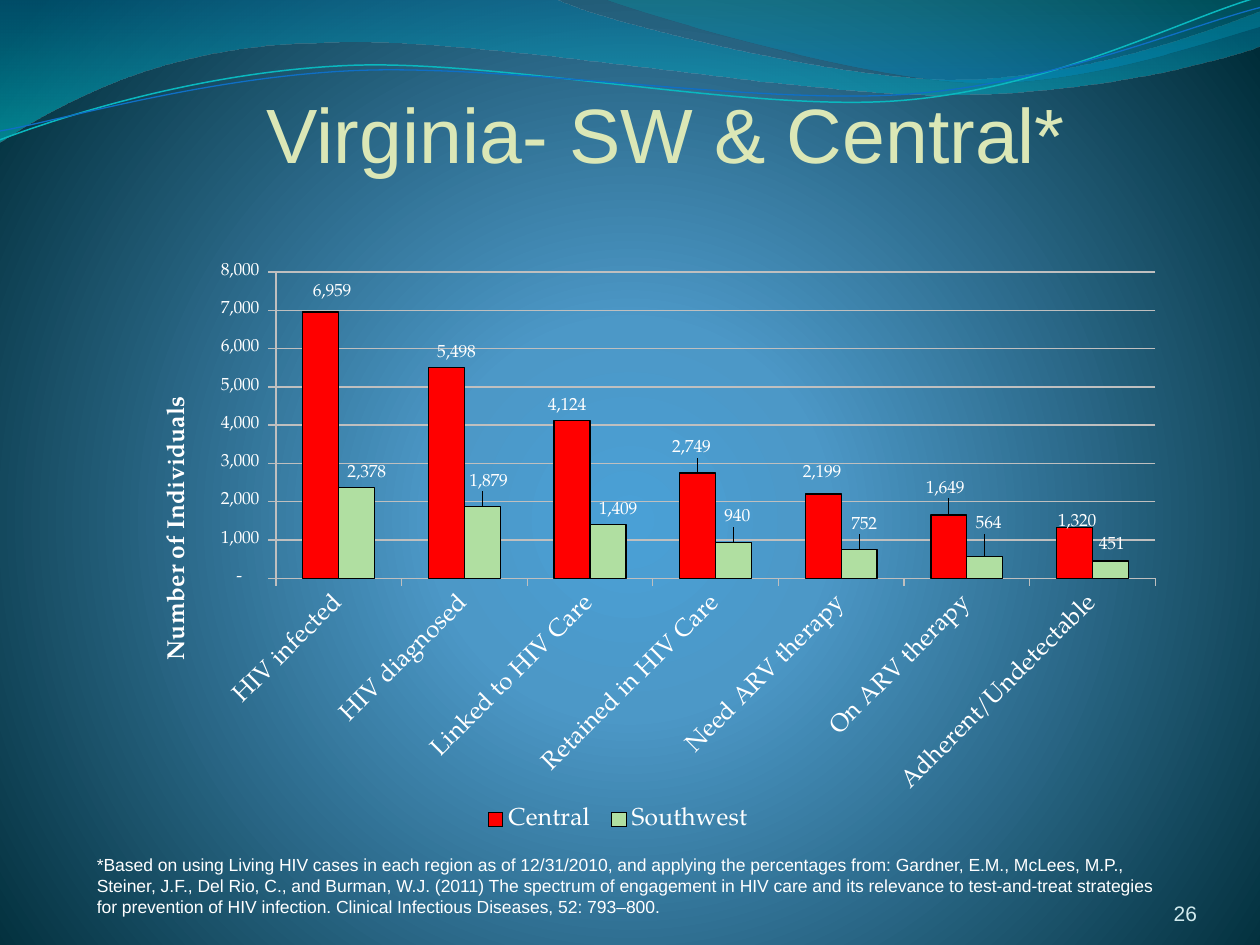
import pptx
import pptx.chart.data
import pptx.dml.color
import pptx.enum.chart
import pptx.enum.text
import pptx.oxml
import pptx.oxml.ns
import pptx.util
from pptx.util import Inches

NS = pptx.oxml.ns.nsdecls("a", "c")
NUM = '_(* #,##0_);_(* \\(#,##0\\);_(* "-"??_);_('
AL = pptx.enum.text.PP_ALIGN
ANC = pptx.enum.text.MSO_ANCHOR
XL = pptx.enum.chart
NO_LEADERS = (
    f'<c:extLst {NS}><c:ext uri="{{CE6537A1-D6FC-4f65-9D91-7224C49458BB}}" '
    'xmlns:c15="http://schemas.microsoft.com/office/drawing/2012/chart">'
    '<c15:showLeaderLines val="0"/></c:ext></c:extLst>')


def qn(tag):
    return pptx.oxml.ns.qn(tag)


def rgb(h):
    return pptx.dml.color.RGBColor.from_string(h)


def set_gradient(fill, props, stops, direction):
    """Fill with (position %, colour, opacity %) stops."""
    fill.gradient()
    gs = "".join(
        f'<a:gs pos="{p * 1000}"><a:srgbClr val="{c}"><a:alpha val="{o * 1000}"/>'
        f"</a:srgbClr></a:gs>" for p, c, o in stops)
    new = pptx.oxml.parse_xml(
        f'<a:gradFill {NS} rotWithShape="1"><a:gsLst>{gs}</a:gsLst>{direction}</a:gradFill>')
    props.replace(props.find(qn("a:gradFill")), new)


def place(el, size, values, after=None, target=None, edge=True):
    """Give a chart part a manual layout, in inches on a chart of that size."""
    parts = f'<c:layoutTarget val="{target}"/>' if target else ""
    if edge:
        parts += '<c:xMode val="edge"/><c:yMode val="edge"/>'
    for tag, v, whole in zip("xywh", values, size * 2):
        parts += f'<c:{tag} val="{v / whole:.5f}"/>'
    new = pptx.oxml.parse_xml(
        f"<c:layout {NS}><c:manualLayout>{parts}</c:manualLayout></c:layout>")
    for old in el.findall(qn("c:layout")):
        el.remove(old)
    if after:
        el.find(qn(after)).addnext(new)
    else:
        el.insert(0, new)
    return new


class Deck:
    font = "Arial"
    chart_font = "TeX Gyre Pagella"
    white = "FFFFFF"
    grid = "BFBFBF"

    def __init__(self):
        self.prs = pptx.Presentation()
        self.prs.slide_width, self.prs.slide_height = Inches(10), Inches(7.5)
        self.s = self.prs.slides.add_slide(self.prs.slide_layouts[6])

    def background(self, stops):
        fill = self.s.background.fill
        fill.gradient()
        set_gradient(fill, self.s.background._cSld.bg.bgPr, stops,
                     '<a:path path="circle"><a:fillToRect l="10000" t="110000" '
                     'r="10000" b="100000"/></a:path>')

    def wave(self, start, segments, stops=None, line=None):
        """Segments are straight (x, y) or cubic (x1, y1, x2, y2, x, y)."""
        fb = self.s.shapes.build_freeform(*map(Inches, start))
        for seg in segments:
            pts = [tuple(map(Inches, pt)) for pt in zip(seg[::2], seg[1::2])]
            fb.add_line_segments(pts, close=False)
        if stops:
            fb.add_line_segments([], close=True)
        sp = fb.convert_to_shape()
        # Join the three points of each cubic segment into one curve
        steps = iter(list(sp._element.iter(qn("a:lnTo"))))
        for seg in segments:
            group = [next(steps) for _ in range(len(seg) // 2)]
            if len(group) == 3:
                curve = pptx.oxml.parse_xml(f"<a:cubicBezTo {NS}/>")
                group[0].addprevious(curve)
                for step in group:
                    curve.append(step[0])
                    step.getparent().remove(step)
        sp.shadow.inherit = False
        if stops:
            set_gradient(sp.fill, sp._element.spPr, stops, '<a:lin ang="5400000" scaled="1"/>')
            sp.line.fill.background()
        else:
            sp.fill.background()
            sp.line.color.rgb = rgb(line[0])
            sp.line.width = pptx.util.Pt(line[1])

    def text(self, box, text, size, color, align=AL.LEFT, anchor=ANC.TOP, inset=(0, 0)):
        sp = self.s.shapes.add_textbox(*map(Inches, box))
        tf = sp.text_frame
        tf.word_wrap = True
        tf.vertical_anchor = anchor
        tf.margin_left = tf.margin_right = Inches(inset[0])
        tf.margin_top = tf.margin_bottom = Inches(inset[1])
        p = tf.paragraphs[0]
        p.alignment = align
        r = p.add_run()
        r.text = text
        self.style(r.font, size, color, self.font)

    def style(self, font, size, color=white, name=chart_font, bold=False):
        font.size, font.name, font.bold = pptx.util.Pt(size), name, bold
        font.color.rgb = rgb(color)

    def axis(self, axis, size):
        axis.major_tick_mark = XL.XL_TICK_MARK.OUTSIDE
        axis.format.line.color.rgb = rgb(self.grid)
        self.style(axis.tick_labels.font, size)

    def column_chart(self, box, cats, series, axis_title):
        size = box[2:]
        data = pptx.chart.data.CategoryChartData(number_format=NUM)
        data.categories = cats
        for name, _, vals, _ in series:
            data.add_series(name, vals)
        ch = self.s.shapes.add_chart(
            XL.XL_CHART_TYPE.COLUMN_CLUSTERED, *map(Inches, box), data).chart
        self.style(ch.font, 10)
        ch.has_title = False
        plot = ch.plots[0]
        plot.gap_width, plot.overlap, plot.vary_by_categories = 150, 0, False
        place(ch._chartSpace.chart.plotArea, size, (1.11, 0.16, 6.98, 2.43), target="inner")

        # Axes
        cat, val = ch.category_axis, ch.value_axis
        self.axis(cat, 14)
        self.axis(val, 10)
        cat._element.txPr.bodyPr.set("rot", "-2700000")
        val.minimum_scale, val.maximum_scale, val.major_unit = 0, 8000, 1000
        val.major_gridlines.format.line.color.rgb = rgb(self.grid)
        val.tick_labels.number_format = NUM
        val.tick_labels.number_format_is_linked = False
        tf = val.axis_title.text_frame
        tf._txBody.bodyPr.set("rot", "-5400000")
        tf._txBody.bodyPr.set("vert", "horz")
        r = tf.paragraphs[0].add_run()
        r.text = axis_title
        self.style(r.font, 14, bold=True)
        place(val.axis_title._element, size, (0.18, 1.11), "c:tx")

        # Legend
        ch.has_legend = True
        ch.legend.position = XL.XL_LEGEND_POSITION.BOTTOM
        ch.legend.include_in_layout = False
        self.style(ch.legend.font, 14)
        place(ch.legend._element, size, (2.69, 4.34, 2.27, 0.33), "c:legendPos")

        # Bars and their nudged value labels
        for ser, (_, color, _, nudges) in zip(plot.series, series):
            ser.format.fill.solid()
            ser.format.fill.fore_color.rgb = rgb(color)
            ser.format.line.color.rgb = rgb("000000")
            ser.format.line.width = pptx.util.Pt(0.75)
            labels = ser.data_labels
            labels.show_value = True
            labels.number_format, labels.number_format_is_linked = NUM, False
            labels.position = XL.XL_LABEL_POSITION.OUTSIDE_END
            self.style(labels.font, 10)
            for i, nudge in enumerate(nudges):
                label = ser.points[i].data_label
                self.style(label.font, 10)
                label.position = XL.XL_LABEL_POSITION.OUTSIDE_END
                fmt = pptx.oxml.parse_xml(f'<c:numFmt {NS} formatCode="" sourceLinked="0"/>')
                fmt.set("formatCode", NUM)
                place(label._dLbl, size, nudge, "c:idx", edge=False).addnext(fmt)
            labels._element.append(pptx.oxml.parse_xml(NO_LEADERS))


d = Deck()
d.background([(0, "4AA0D6", 100), (25, "4C98C7", 100), (100, "002C38", 100)])

# Waves along the top
d.wave((0, -0.01), [(4.4, -0.01), (4.76, 0.17, 6.64, 0.63, 7.58, 0.63),
                    (8.53, 0.63, 9.58, 0.26, 10, 0.09), (10.01, 0.36),
                    (9.83, 0.44, 8.7, 0.76, 7.46, 0.75), (6.22, 0.75, 3.82, 0.28, 2.57, 0.34),
                    (1.29, 0.35, 0.46, 0.83, -0.01, 1.13), (0, -0.01)],
       stops=[(0, "0074A1", 45), (100, "00C6CF", 55)])
d.wave((4.79, -0.01), [(5.09, 0.11, 6.82, 0.62, 7.69, 0.65),
                       (8.56, 0.69, 9.61, 0.32, 10, 0.21), (10, 0), (4.79, -0.01)],
       stops=[(0, "00A1A9", 30), (80, "008BBF", 45)])
d.wave((0, 1.11), [(0.48, 0.93, 1.58, 0.57, 2.77, 0.52), (3.95, 0.47, 5.93, 0.89, 7.13, 0.8),
                   (8.33, 0.71, 9.38, 0.15, 9.98, -0.02)], line=("0AB8BF", 0.85))
d.wave((0, 1.04), [(0.47, 0.96, 1.64, 0.61, 2.83, 0.56), (4.03, 0.51, 5.97, 0.83, 7.17, 0.75),
                   (8.36, 0.67, 9.41, 0.21, 10, 0.06)], line=("0F6FC6", 0.75))

# Title and slide number
d.text((0.75, 0.51, 9.08, 0.91), "Virginia- SW & Central*", 44, "DBE7B6", AL.CENTER, ANC.BOTTOM)
d.text((8.67, 6.95, 0.83, 0.4), "26", 12, "D1EAEE", AL.RIGHT, ANC.BOTTOM)

# Chart: name, colour, values, label offsets
d.column_chart(
    (1.08, 2, 8.25, 4.75),
    ["HIV infected", "HIV diagnosed", "Linked to HIV Care", "Retained in HIV Care",
     "Need ARV therapy", "On ARV therapy", "Adherent/Undetectable"],
    [("Central", "FF0000", (6959, 5498, 4124, 2749, 2199, 1649, 1320),
      [(0.09, -0.04), (0.08, 0), (-0.04, 0), (-0.05, -0.08), (-0.01, -0.05), (-0.03, -0.09),
       (0.02, 0.07)]),
     ("Southwest", "B0DFA1", (2378, 1879, 1409, 940, 752, 564, 451),
      [(0.08, 0), (0.05, -0.08), (0.08, 0), (0.03, -0.08), (0.04, -0.08), (0.03, -0.14),
       (0.01, -0.01)])],
    "Number of Individuals")

# Footnote
d.text((0.67, 6.73, 8.67, 0.77),
       "*Based on using Living HIV cases in each region as of 12/31/2010, and applying the "
       "percentages from: Gardner, E.M., McLees, M.P., Steiner, J.F., Del Rio, C., and Burman, "
       "W.J. (2011) The spectrum of engagement in HIV care and its relevance to test-and-treat "
       "strategies for prevention of HIV infection. Clinical Infectious Diseases, 52: 793–800.",
       10, Deck.white, inset=(0.1, 0.05))
d.prs.save("out.pptx")
